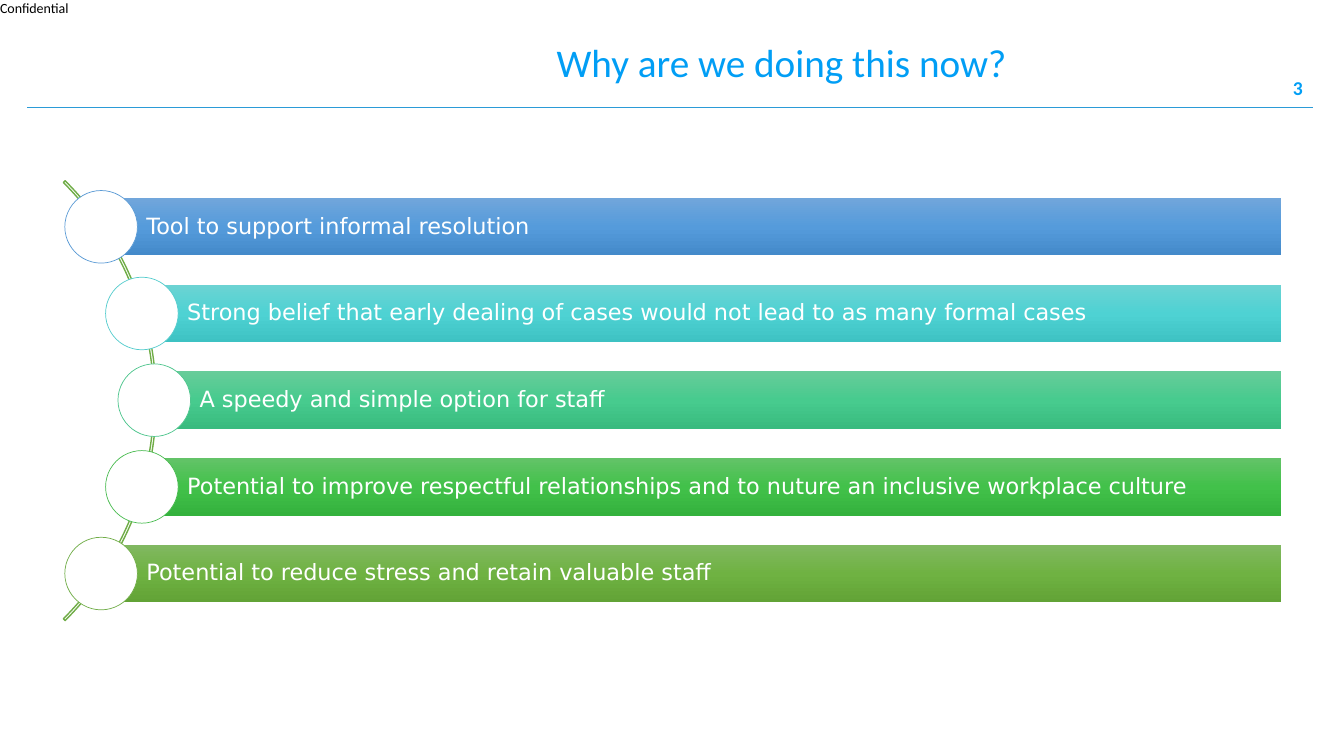
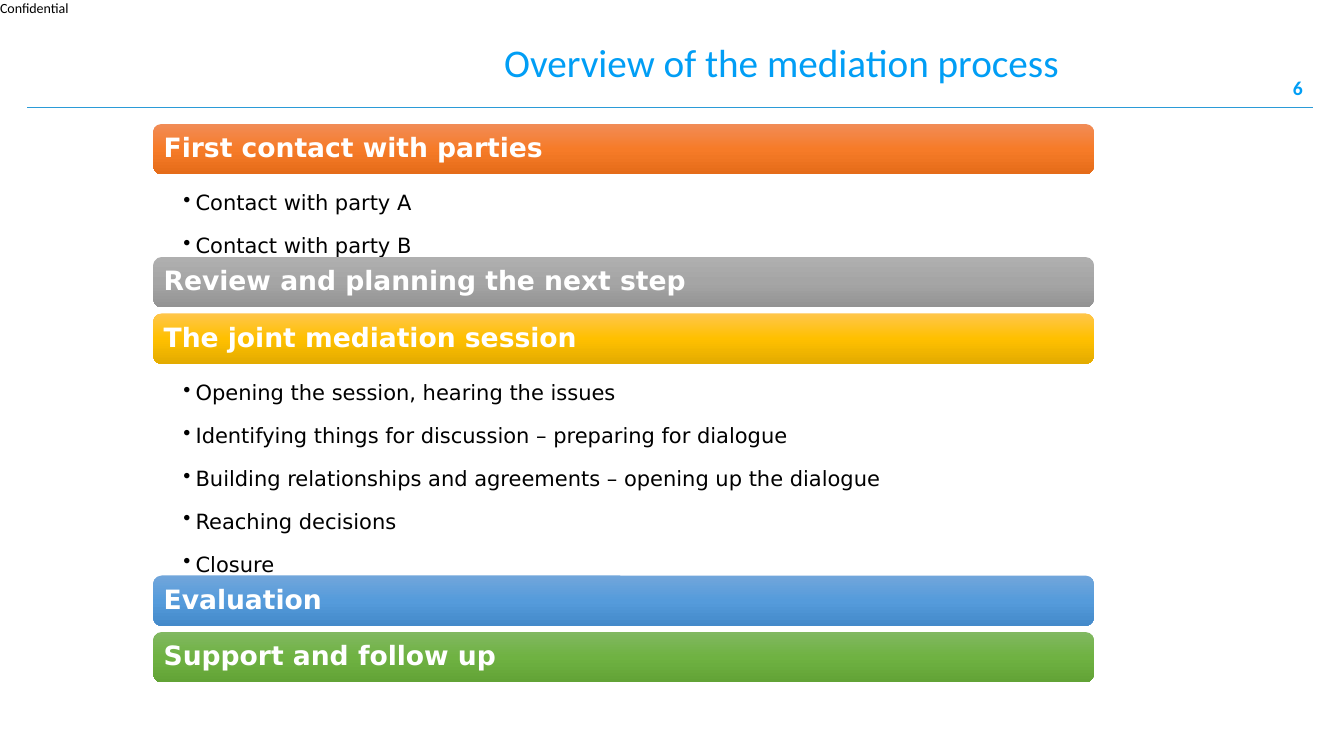
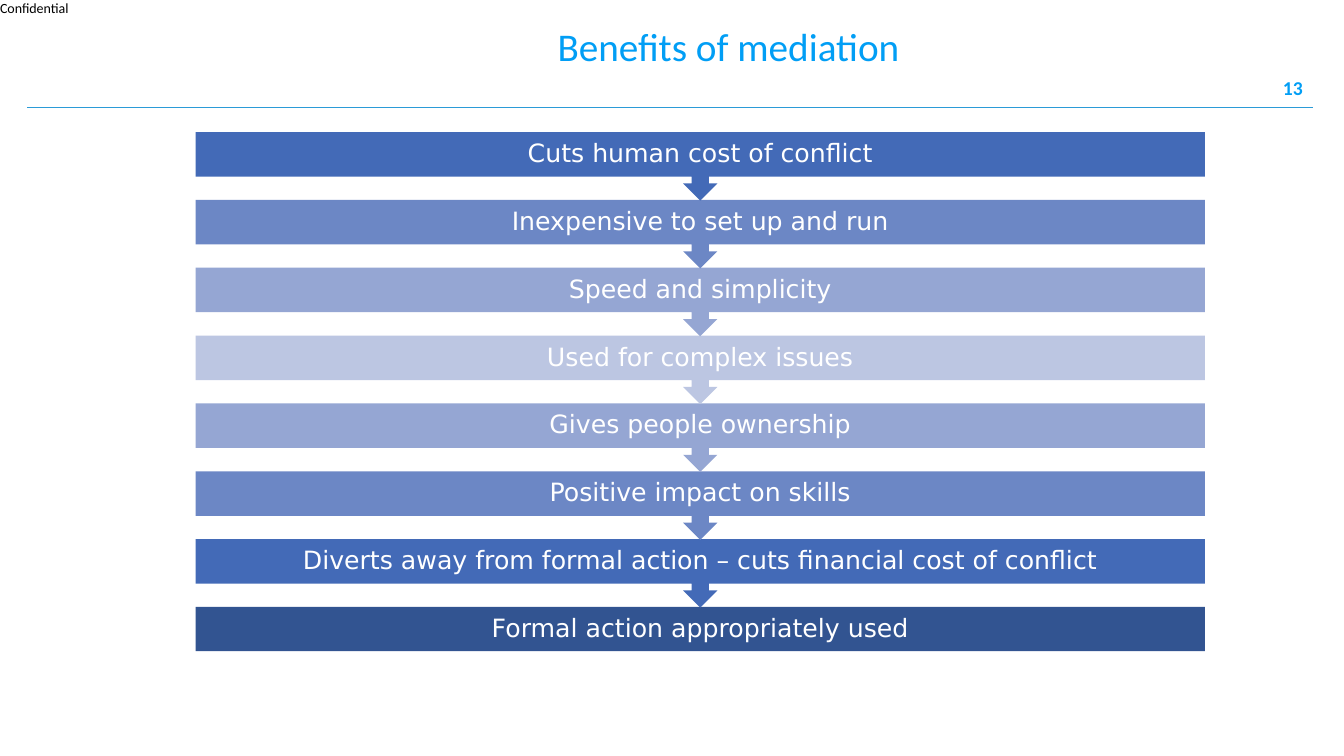
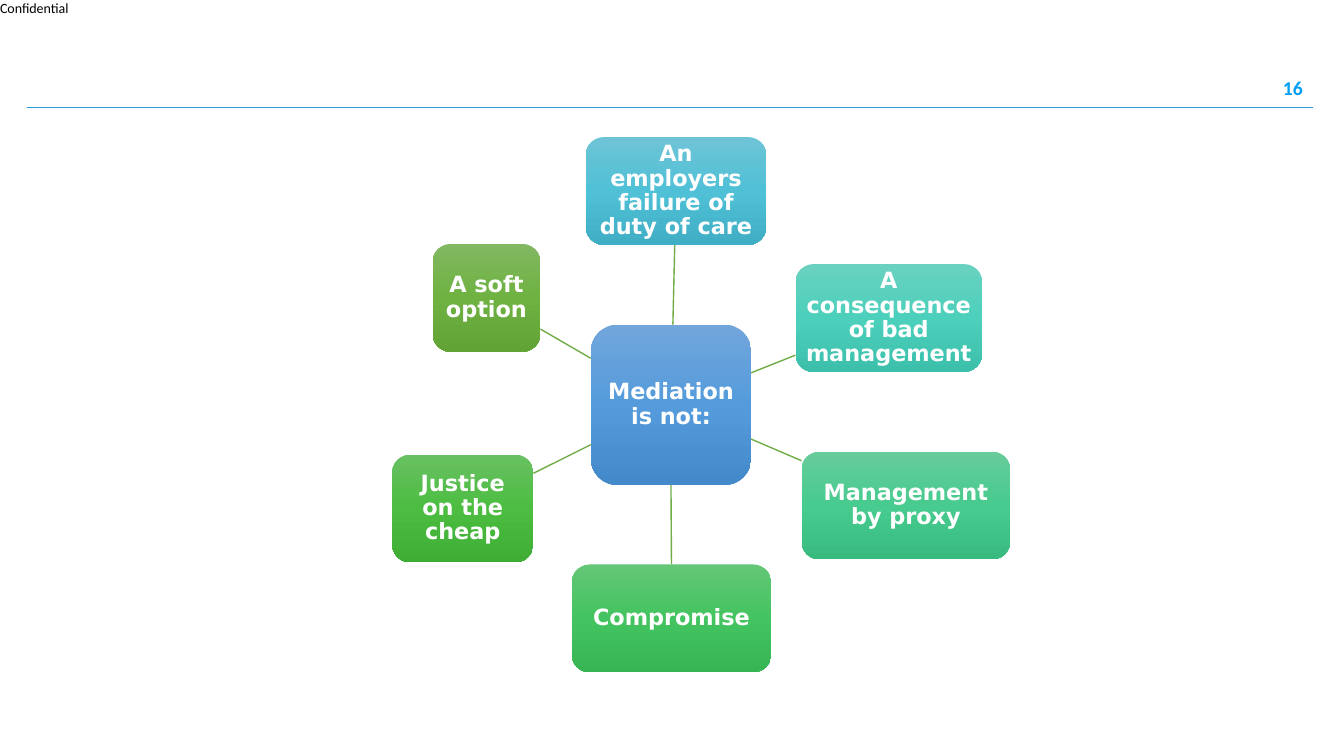
from copy import deepcopy
from math import sqrt

from lxml import etree
from pptx import Presentation
from pptx.dml.color import RGBColor
from pptx.enum import shapes, text
from pptx.oxml.ns import qn
from pptx.util import Inches, Pt

# Content
HEADS = [  # number, title, title box
    ("3", "Why are we doing this now?", (2.79, 0.4, 9.92, 1.45)),
    ("6", "Overview of the mediation process", (2.79, 0.4, 9.92, 1.45)),
    ("13", "Benefits of mediation", (3.06, 0.24, 8.33, 1.25)),
    ("16", None, None),
]
WHY = [  # text, gradient, ring colour
    ("Tool to support informal resolution", "blue", "5B9BD5"),
    ("Strong belief that early dealing of cases would not lead to as many formal cases",
     "cyan", "54CCCD"),
    ("A speedy and simple option for staff", "mint", "4DC58D"),
    ("Potential to improve respectful relationships and to nuture an inclusive workplace culture",
     "green", "48BB4F"),
    ("Potential to reduce stress and retain valuable staff", "leaf", "70AD47"),
]
STAGES = [  # heading, gradient, bullets, space below
    ("First contact with parties", "orange",
     ["Contact with party A", "Contact with party B"], 0.82),
    ("Review and planning the next step", "grey", [], 0.06),
    ("The joint mediation session", "gold",
     ["Opening the session, hearing the issues",
      "Identifying things for discussion – preparing for dialogue",
      "Building relationships and agreements – opening up the dialogue",
      "Reaching decisions", "Closure"], 2.1),
    ("Evaluation", "blue", [], 0.06),
    ("Support and follow up", "leaf", [], 0.06),
]
GAINS = [
    ("Cuts human cost of conflict", "436AB7"),
    ("Inexpensive to set up and run", "6C87C5"),
    ("Speed and simplicity", "95A6D3"),
    ("Used for complex issues", "BCC6E2"),
    ("Gives people ownership", "95A6D3"),
    ("Positive impact on skills", "6C87C5"),
    ("Diverts away from formal action – cuts financial cost of conflict", "436AB7"),
    ("Formal action appropriately used", "325491"),
]
HUB = ("Mediation is not:", "blue", (5.86, 3.22, 1.59, 1.59))
MYTHS = [
    ("An employers failure of duty of care", "aqua", (5.81, 1.36, 1.79, 1.07)),
    ("A consequence of bad management", "teal", (7.89, 2.62, 1.85, 1.07)),
    ("Management by proxy", "mint", (7.95, 4.48, 2.07, 1.07)),
    ("Compromise", "jade", (5.67, 5.6, 1.98, 1.07)),
    ("Justice on the cheap", "lime", (3.89, 4.51, 1.4, 1.07)),
    ("A soft option", "leaf", (4.29, 2.42, 1.07, 1.07)),
]

# Look
HEX = {"title": "019EF5", "rule": "2B9BD7", "link": "70AD47",
       "white": "FFFFFF", "black": "000000"}
GRADS = {
    "blue": ("71A6DB", "559BDB", "448ACA"), "cyan": ("6CD3D3", "4ED2D3", "3EC2C3"),
    "mint": ("67CC9A", "47CB8E", "39BB7F"), "green": ("63C368", "42C14A", "34B23D"),
    "leaf": ("81B861", "6FB242", "62A336"), "orange": ("F18C57", "F67B28", "E56C19"),
    "grey": ("AFAFAF", "A5A5A5", "939393"), "gold": ("FFC64B", "FFC000", "E3AB00"),
    "aqua": ("6EC4D6", "50C0D6", "40AFC5"), "teal": ("6AD1C0", "4CD0BC", "3CC0AC"),
    "jade": ("64C677", "44C460", "36B552"), "lime": ("69C062", "4CBD41", "3FAD34"),
}
BODY, HEAD = "DejaVu Sans", "Calibri"
KIND, ALIGN = shapes.MSO_SHAPE, text.PP_ALIGN
MID, TOP = text.MSO_ANCHOR.MIDDLE, text.MSO_ANCHOR.TOP


def rgb(name):
    return RGBColor.from_string(HEX.get(name, name))


def write(shape, lines, size=16, font=BODY, color="white", bold=False, align=ALIGN.LEFT,
          anchor=MID, inset=(0.1, 0.05, 0.1, 0.05), lead=0.9, after=0, bullet=None, wrap=True):
    frame = shape.text_frame
    frame.word_wrap, frame.vertical_anchor = wrap, anchor
    (frame.margin_left, frame.margin_top,
     frame.margin_right, frame.margin_bottom) = map(Inches, inset)
    for i, line in enumerate([lines] if isinstance(lines, str) else lines):
        para = frame.paragraphs[0] if i == 0 else frame.add_paragraph()
        if bullet:
            props = para._p.get_or_add_pPr()
            props.set("marL", str(Inches(0.12)))
            props.set("indent", str(-Inches(0.12)))
            etree.SubElement(props, qn("a:buChar")).set("char", bullet)
        para.alignment, para.line_spacing, para.space_after = align, lead, Pt(after)
        run = para.add_run()
        run.text = line
        run.font.name, run.font.size, run.font.bold = font, Pt(size), bold
        run.font.color.rgb = rgb(color)


def label(slide, box, lines, **look):
    write(slide.shapes.add_textbox(*map(Inches, box)), lines, **look)


def draw(slide, kind, box, fill=None, line=None, width=0.5):
    shape = slide.shapes.add_shape(kind, *map(Inches, box))
    shape.shadow.inherit = False
    if fill in GRADS:
        shape.fill.gradient()
        shape.fill.gradient_angle = 270
        stops = shape._element.spPr.find(".//" + qn("a:gsLst"))
        stops.insert(1, deepcopy(stops[0]))
        for i, stop in enumerate(shape.fill.gradient_stops):
            stop.position, stop.color.rgb = i / 2, rgb(GRADS[fill][i])
    elif fill:
        shape.fill.solid()
        shape.fill.fore_color.rgb = rgb(fill)
    else:
        shape.fill.background()
    if line:
        shape.line.color.rgb, shape.line.width = rgb(line), Pt(width)
    else:
        shape.line.fill.background()
    return shape


def join(slide, start, end, color, width):
    wire = slide.shapes.add_connector(shapes.MSO_CONNECTOR.STRAIGHT,
                                      *map(Inches, start + end))
    wire.line.color.rgb, wire.line.width = rgb(color), Pt(width)
    etree.SubElement(wire._element.spPr, qn("a:effectLst"))
    return wire


def frame(deck, num, title, box):
    slide = deck.slides.add_slide(deck.slide_layouts[6])
    join(slide, (0.27, 1.07), (13.02, 1.07), "rule", 0.5)
    label(slide, (0, 0, 0.72, 0.17), "Confidential", size=10, font=HEAD, color="black",
          anchor=TOP, inset=(0, 0, 0, 0), lead=1, wrap=False)
    label(slide, (10.02, 0.67, 3, 0.4), num, size=14, font=HEAD, color="title",
          bold=True, align=ALIGN.RIGHT, lead=1)
    if title:
        label(slide, box, title, size=28, font=HEAD, color="title",
              align=ALIGN.CENTER, anchor=TOP, lead=0.85)
    return slide


def reasons(slide):
    # Circles sit on one arc; each bar starts at its circle's centre
    hubx, huby, rad, step, dot, tall = -1.54, 3.97, 3.07, 0.86, 0.72, 0.57
    size, right = 6.17, 12.71
    arc = draw(slide, KIND.BLOCK_ARC, (-4.62, 0.89, size, size), line="link", width=1)
    for i, value in enumerate((189, 27, 0.004)):
        arc.adjustments[i] = value
    for i, (words, fill, ring) in enumerate(WHY):
        drop = (i - 2) * step
        x, y = hubx + sqrt(rad ** 2 - drop ** 2), huby + drop
        bar = draw(slide, KIND.RECTANGLE, (x, y - tall / 2, right - x, tall), fill)
        write(bar, words, inset=(0.45, 0.04, 0.04, 0.04))
        draw(slide, KIND.OVAL, (x - dot / 2, y - dot / 2, dot, dot), "white", ring)


def process(slide):
    left, y, wide, tall = 1.52, 1.23, 9.33, 0.5
    for words, fill, points, below in STAGES:
        bar = draw(slide, KIND.ROUNDED_RECTANGLE, (left, y, wide, tall), fill)
        write(bar, words, size=19, bold=True, inset=(0.08,) * 4)
        y += tall
        if points:
            label(slide, (left, y, wide, below), points, size=15, color="black", anchor=TOP,
                  inset=(0.3, 0.03, 0.15, 0.03), lead=1.5, after=3.7, bullet="•")
        y += below


def benefits(slide):
    # Drawn from the last step up, so each arrow tip lies over the next bar
    left, top, wide, step = 1.94, 1.31, 10.01, 0.673
    for i, (words, fill) in reversed(list(enumerate(GAINS))):
        last = i == len(GAINS) - 1
        kind = KIND.RECTANGLE if last else KIND.DOWN_ARROW_CALLOUT
        bar = draw(slide, kind, (left, top + i * step, wide, 0.44 if last else 0.68), fill)
        write(bar, words, size=18, align=ALIGN.CENTER, inset=(0.14, 0, 0.14, 0))


def centre(box):
    return box[0] + box[2] / 2, box[1] + box[3] / 2


def edge(box, goal):
    # Where the line from the box's centre to the goal leaves the box
    x, y = centre(box)
    dx, dy = goal[0] - x, goal[1] - y
    part = min(half / abs(d) for half, d in ((box[2] / 2, dx), (box[3] / 2, dy)) if d)
    return x + dx * part, y + dy * part


def myths(slide):
    def node(words, fill, box):
        shape = draw(slide, KIND.ROUNDED_RECTANGLE, box, fill)
        write(shape, words, bold=True, align=ALIGN.CENTER, inset=(0.04,) * 4)
        return shape

    core, mid = node(*HUB), centre(HUB[2])
    for words, fill, box in MYTHS:
        goal = centre(box)
        wire = join(slide, edge(HUB[2], goal), edge(box, mid), "link", 1)
        shape = node(words, fill, box)
        if abs(goal[0] - mid[0]) < 0.01:  # straight below the hub
            wire.begin_connect(core, 2)
            wire.end_connect(shape, 0)


def main():
    deck = Presentation()
    deck.slide_width, deck.slide_height = Inches(13.33), Inches(7.5)
    for head, fill in zip(HEADS, (reasons, process, benefits, myths)):
        fill(frame(deck, *head))
    deck.save("out.pptx")


if __name__ == "__main__":
    main()
